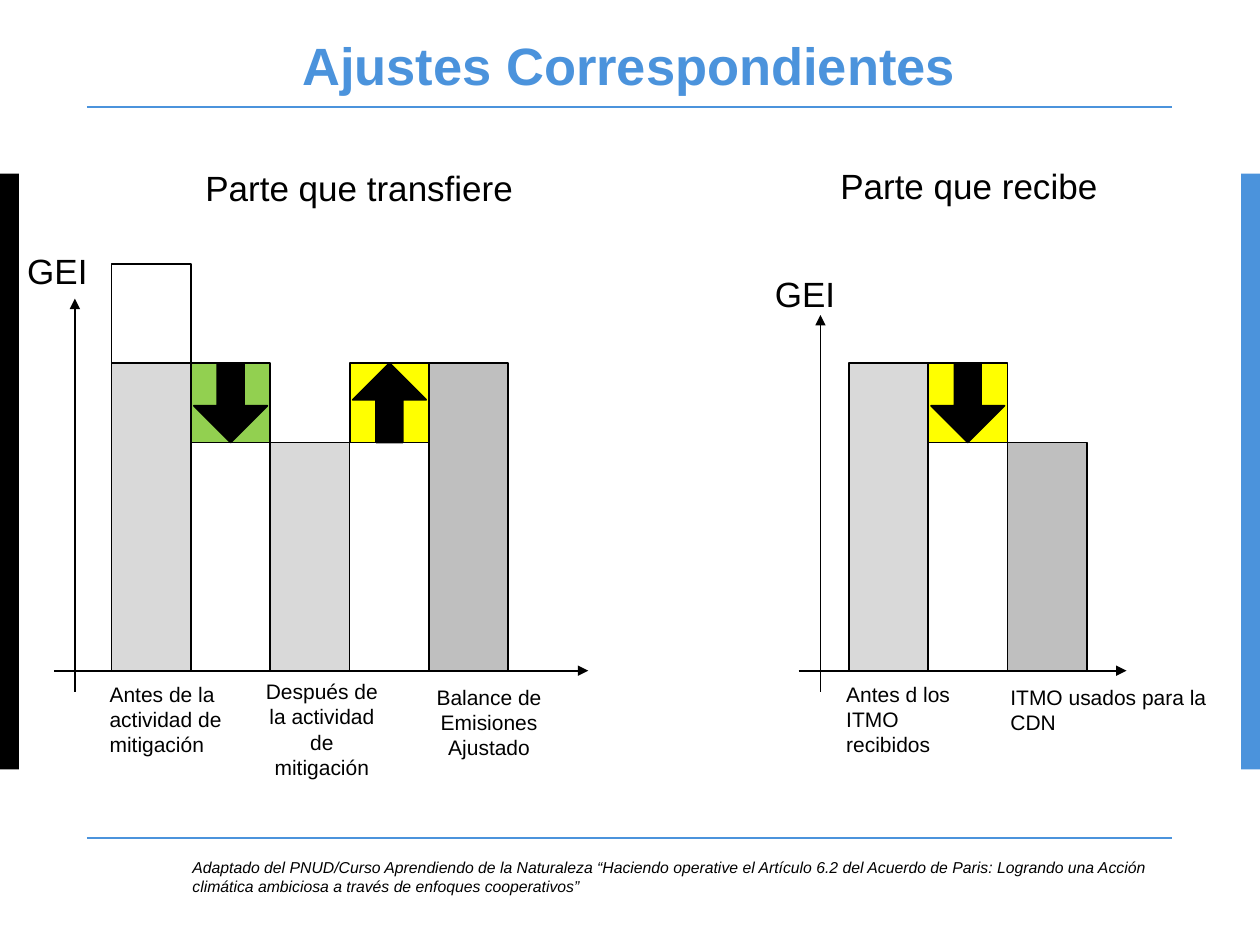
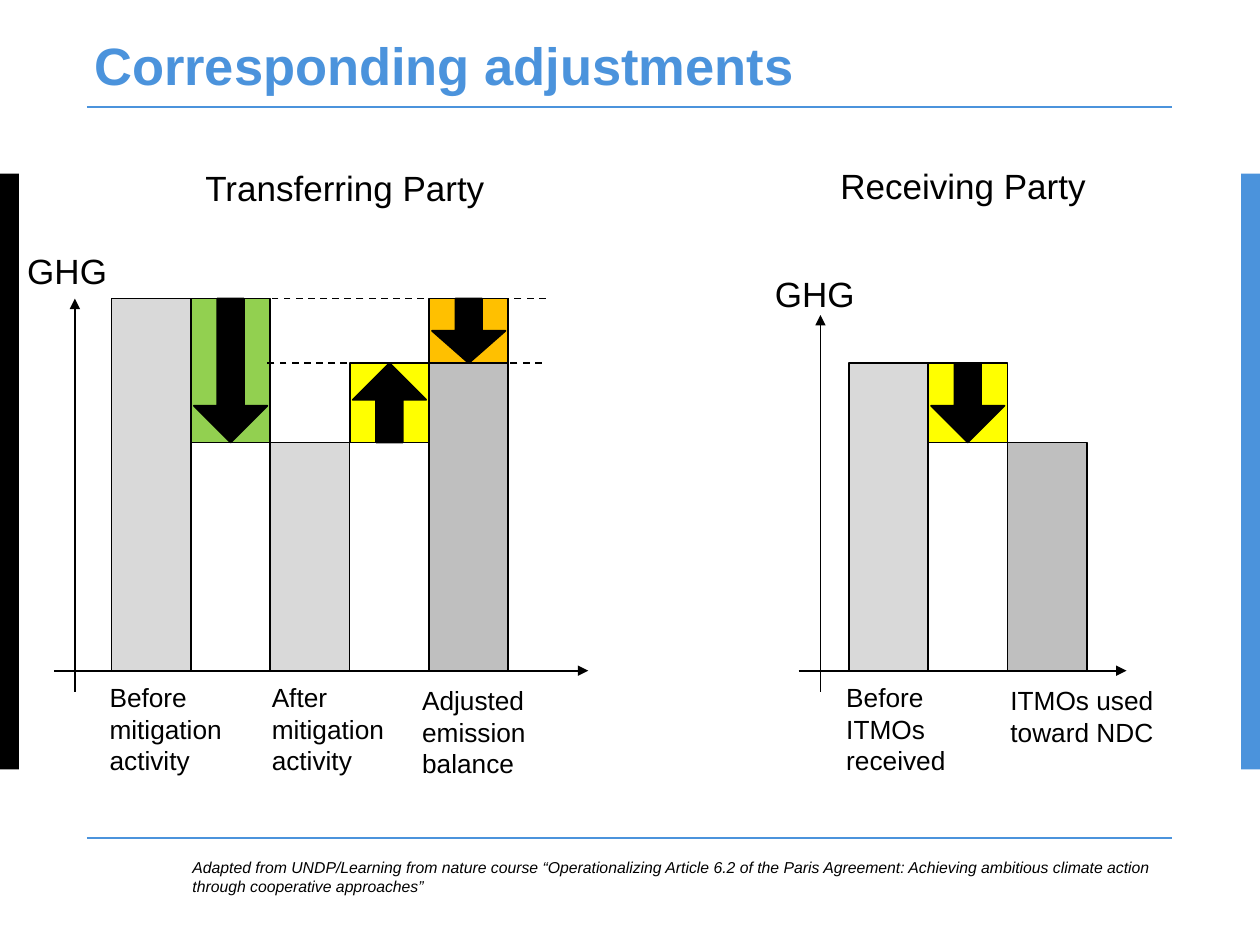
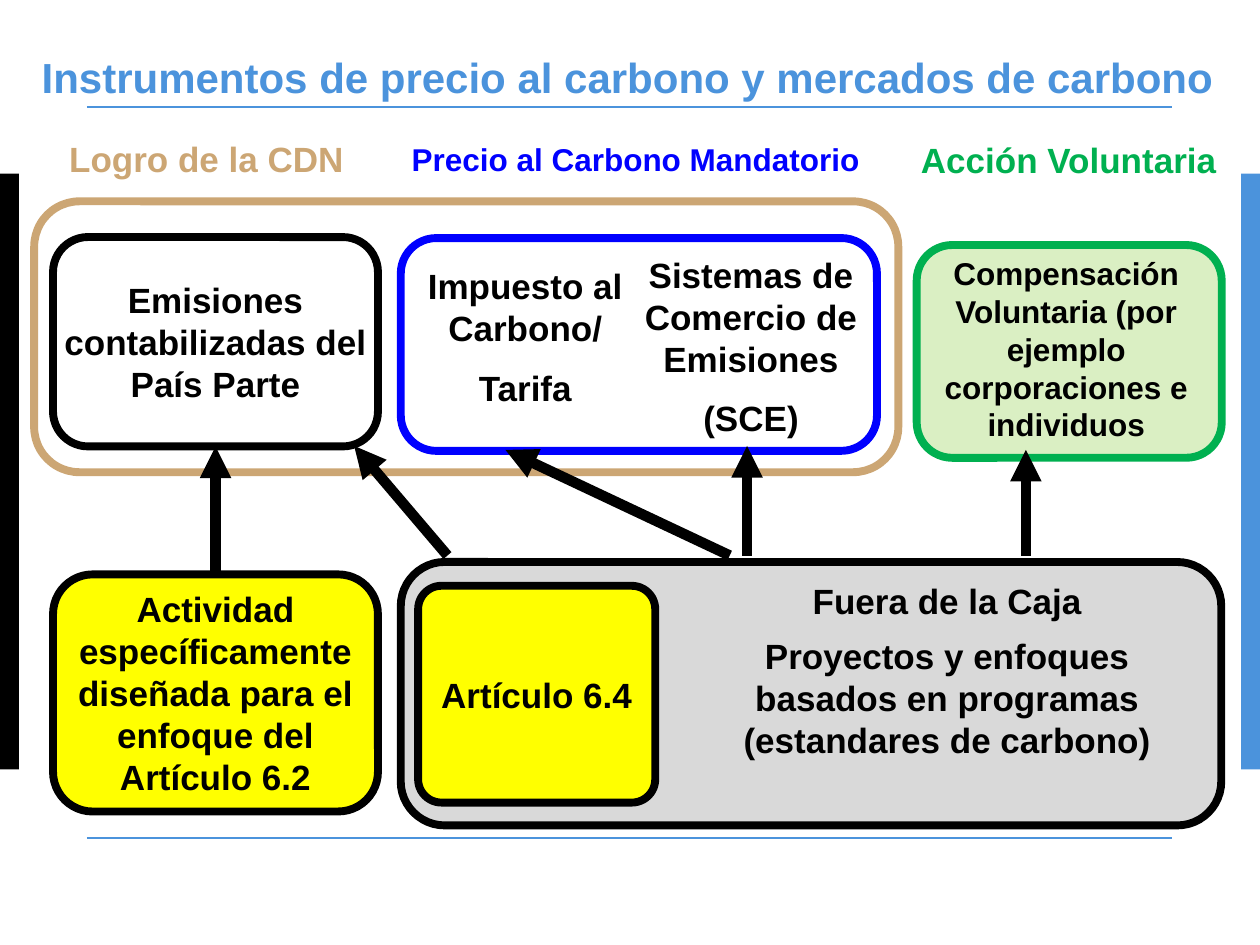
from dataclasses import dataclass

from lxml.etree import SubElement
from pptx import Presentation
from pptx.dml.color import RGBColor
from pptx.enum.dml import MSO_LINE_DASH_STYLE as Dash
from pptx.enum.shapes import MSO_CONNECTOR as Connector
from pptx.enum.shapes import MSO_SHAPE as Shape
from pptx.enum.text import MSO_ANCHOR as Anchor
from pptx.enum.text import MSO_AUTO_SIZE as AutoSize
from pptx.enum.text import PP_ALIGN as Align
from pptx.oxml.ns import qn
from pptx.util import Cm, Pt


@dataclass(frozen=True)
class Theme:
    font: str = "Arial"
    black: str = "000000"
    accent: str = "4B93DC"
    light_bar: str = "D9D9D9"
    dark_bar: str = "BFBFBF"
    mitigation: str = "92D050"
    transfer: str = "FFFF00"
    excess: str = "FFC000"
    ndc: str = "CCA674"
    mandatory: str = "0000FF"
    voluntary: str = "00B050"
    voluntary_fill: str = "DAEFC3"
    title_size: int = 30
    long_title_size: int = 24
    body_size: int = 20
    small_body_size: int = 18
    note_size: int = 9
    thin: float = 1
    frame: float = 4.5
    thick: float = 6


THEME = Theme()

# Emission diagrams, in centimetres; levels are heights above the time axis
BASELINE = 13.52
COLUMN = 1.6
ARROW = 1.48
TRANSFERRING, RECEIVING = 2.25, 17.11
REDUCED, BALANCED, INITIAL = 4.6, 6.2, 7.5
BASELINE_SCENARIO = 8.2


def set_format(target, **values):
    for attribute, value in values.items():
        setattr(target, attribute, value)


def cm_box(box):
    return [Cm(length) for length in box]


def write_text(frame, paragraphs, size, color=THEME.black, align=Align.LEFT,
               gap=10, line_spacing=None, **font):
    """Fill a text frame; gap is the space between paragraphs in points."""
    for index, words in enumerate(paragraphs):
        paragraph = frame.paragraphs[0] if index == 0 else frame.add_paragraph()
        paragraph.text = words
        set_format(paragraph, alignment=align, line_spacing=line_spacing,
                   space_before=Pt(gap if index else 0))
        set_format(paragraph.font, name=THEME.font, size=Pt(size), **font)
        paragraph.font.color.rgb = RGBColor.from_string(color)


def add_text(slide, box, *paragraphs, size=THEME.body_size, **style):
    frame = slide.shapes.add_textbox(*cm_box(box)).text_frame
    set_format(frame, word_wrap=True, auto_size=AutoSize.SHAPE_TO_FIT_TEXT)
    write_text(frame, paragraphs, size, **style)


def add_box(slide, kind, box, fill=None, line=None, width=THEME.thin, corner=None):
    shape = slide.shapes.add_shape(kind, *cm_box(box))
    shape.shadow.inherit = False
    if fill:
        shape.fill.solid()
        shape.fill.fore_color.rgb = RGBColor.from_string(fill)
    else:
        shape.fill.background()
    if line:
        shape.line.color.rgb = RGBColor.from_string(line)
        shape.line.width = Pt(width)
    else:
        shape.line.fill.background()
    if corner:
        shape.adjustments[0] = corner
    return shape


def add_card(slide, box, *paragraphs, fill=None, line=THEME.black, corner=0.167):
    """Add a thick rounded frame with centred bold text."""
    card = add_box(slide, Shape.ROUNDED_RECTANGLE, box, fill, line, THEME.frame, corner)
    set_format(card.text_frame, word_wrap=True, vertical_anchor=Anchor.MIDDLE,
               margin_left=0, margin_top=0, margin_right=0, margin_bottom=0)
    write_text(card.text_frame, paragraphs, THEME.body_size, align=Align.CENTER, bold=True)
    return card


def add_line(slide, start, end, color=THEME.black, width=THEME.thin, dash=None, arrow=False):
    line = slide.shapes.add_connector(Connector.STRAIGHT, *cm_box(start + end))
    line.line.color.rgb = RGBColor.from_string(color)
    set_format(line.line, width=Pt(width), dash_style=dash)
    properties = line.element.spPr
    if arrow:
        SubElement(properties.find(qn("a:ln")), qn("a:tailEnd"), type="triangle")
    SubElement(properties, qn("a:effectLst"))
    return line


def add_title(slide, words, box=(1.9, 0.53, 21.56, 1.3), size=THEME.title_size,
              align=Align.LEFT):
    title = slide.shapes.title
    left, top, width, height = cm_box(box)
    set_format(title, left=left, top=top, width=width, height=height)
    set_format(title.text_frame, word_wrap=True, vertical_anchor=Anchor.TOP,
               auto_size=AutoSize.SHAPE_TO_FIT_TEXT,
               margin_left=0, margin_top=0, margin_right=0, margin_bottom=0)
    write_text(title.text_frame, [words], size, THEME.accent, align,
               line_spacing=1.1, bold=True)


def decorate_layout(layout, slide):
    """Draw the side bands and rules, then move them into the layout."""
    bands = [add_box(slide, Shape.RECTANGLE, (left, 3.5, 0.38, 12.01), color)
             for left, color in ((0, THEME.black), (25.02, THEME.accent))]
    rules = [add_line(slide, (1.75, y), (23.62, y), THEME.accent) for y in (2.16, 16.89)]
    for part in bands + rules:
        layout.shapes.element.append(part.element)


def add_bar(slide, party, column, top, bottom=0, fill=None):
    """Add a bar between two emission levels in a column of a party's diagram."""
    box = (party + column * COLUMN, BASELINE - top, COLUMN, top - bottom)
    add_box(slide, Shape.RECTANGLE, box, fill, THEME.black)


def add_change(slide, party, column, top, bottom, fill, rising=False):
    """Add a coloured bar with an arrow showing the change in emissions."""
    add_bar(slide, party, column, top, bottom, fill)
    left = party + column * COLUMN + (COLUMN - ARROW) / 2
    arrow = add_box(slide, Shape.DOWN_ARROW, (left, BASELINE - top, ARROW, top - bottom),
                    THEME.black, THEME.black)
    arrow.adjustments[0] = 0.363
    arrow.rotation = 180 if rising else 0


def add_axes(slide, time_start, time_end, gas_x, gas_top):
    add_line(slide, (time_start, BASELINE), (time_end, BASELINE), arrow=True)
    add_line(slide, (gas_x, 13.94), (gas_x, gas_top), arrow=True)


def add_adjustment_diagrams(slide, before, headings, gas, note):
    """Draw both parties' diagrams; before is the first bar's emission level."""
    add_bar(slide, TRANSFERRING, 0, before, fill=THEME.light_bar)
    add_bar(slide, TRANSFERRING, 2, REDUCED, fill=THEME.light_bar)
    add_bar(slide, TRANSFERRING, 4, BALANCED, fill=THEME.dark_bar)
    add_bar(slide, RECEIVING, 0, BALANCED, fill=THEME.light_bar)
    add_bar(slide, RECEIVING, 2, REDUCED, fill=THEME.dark_bar)
    add_change(slide, TRANSFERRING, 1, before, REDUCED, THEME.mitigation)
    add_change(slide, TRANSFERRING, 3, BALANCED, REDUCED, THEME.transfer, rising=True)
    add_change(slide, RECEIVING, 1, BALANCED, REDUCED, THEME.transfer)
    add_axes(slide, 1.09, 11.86, 1.51, 6.02)
    add_axes(slide, 16.1, 22.71, 16.54, 6.35)
    for heading, box in zip(headings, ((3.89, 3.23, 7.42, 1.12), (16.69, 3.2, 6.63, 1.12))):
        add_text(slide, box, heading)
    for left, top in ((0.3, 4.9), (15.37, 5.36)):
        add_text(slide, (left, top, 2.31, 1.12), gas)
    add_text(slide, (3.63, 17.17, 19.86, 1.68), note, size=THEME.note_size, italic=True)


def add_bar_labels(slide, size, labels):
    for words, left, top, width, align in labels:
        add_text(slide, (left, top, width, 1.8), words, size=size, align=align)


def build_spanish_adjustments(slide):
    add_title(slide, "Ajustes Correspondientes", align=Align.CENTER)
    add_adjustment_diagrams(
        slide, BALANCED, ("Parte que transfiere", "Parte que recibe"), "GEI",
        "Adaptado del PNUD/Curso Aprendiendo de la Naturaleza “Haciendo operative el "
        "Artículo 6.2 del Acuerdo de Paris: Logrando una Acción climática ambiciosa a "
        "través de enfoques cooperativos”")
    add_bar(slide, TRANSFERRING, 0, BASELINE_SCENARIO, BALANCED)
    add_bar_labels(slide, 12, (
        ("Antes de la actividad de mitigación", 1.96, 13.61, 2.92, Align.LEFT),
        ("Después de la actividad de mitigación", 5.03, 13.56, 2.92, Align.CENTER),
        ("Balance de Emisiones Ajustado", 8.26, 13.67, 3.2, Align.CENTER),
        ("Antes d los ITMO recibidos", 16.81, 13.61, 2.92, Align.LEFT),
        ("ITMO usados para la CDN", 20.12, 13.67, 4.52, Align.LEFT)))


def build_english_adjustments(slide):
    add_title(slide, "Corresponding adjustments")
    add_adjustment_diagrams(
        slide, INITIAL, ("Transferring Party", "Receiving Party"), "GHG",
        "Adapted from UNDP/Learning from nature course “Operationalizing Article 6.2 of "
        "the Paris Agreement: Achieving ambitious climate action through cooperative "
        "approaches”")
    add_bar_labels(slide, 15, (
        ("Before mitigation activity", 1.96, 13.61, 2.92, Align.LEFT),
        ("After mitigation activity", 5.23, 13.61, 2.92, Align.LEFT),
        ("Adjusted emission balance", 8.26, 13.67, 4.52, Align.LEFT),
        ("Before ITMOs received", 16.81, 13.61, 2.54, Align.LEFT),
        ("ITMOs used toward NDC", 20.12, 13.67, 4.52, Align.LEFT)))
    for level, right, left in ((BALANCED, 10.92, 5.38), (INITIAL, 11, 5.49)):
        y = BASELINE - level
        add_line(slide, (right, y), (left, y), dash=Dash.DASH)
    add_change(slide, TRANSFERRING, 4, INITIAL, BALANCED, THEME.excess)


def build_carbon_instruments(slide):
    add_title(slide, "Instrumentos de precio al carbono y mercados de carbono",
              (0.84, 0.94, 24.33, 1.04), THEME.long_title_size)
    add_card(slide, (0.69, 4.06, 17.42, 5.46), line=THEME.ndc)
    add_card(slide, (8.08, 4.8, 9.6, 4.29), line=THEME.mandatory)
    add_card(slide, (18.48, 4.94, 6.15, 4.29), fill=THEME.voluntary_fill,
             line=THEME.voluntary)
    add_card(slide, (8.08, 11.33, 16.54, 5.31), fill=THEME.light_bar)

    centred = dict(align=Align.CENTER, bold=True)
    for words, box, color, size in (
            ("Logro de la CDN", (0.84, 2.64, 6.65, 1.12), THEME.ndc, THEME.body_size),
            ("Precio al Carbono Mandatorio", (7.72, 2.69, 10.19, 1.02),
             THEME.mandatory, THEME.small_body_size),
            ("Acción Voluntaria", (18.19, 2.67, 6.71, 1.12),
             THEME.voluntary, THEME.body_size)):
        add_text(slide, box, words, color=color, size=size, **centred)
    add_text(slide, (8.28, 5.21, 4.62, 3.25), "Impuesto al Carbono/", "Tarifa", **centred)
    add_text(slide, (12.37, 4.98, 5.54, 4.11), "Sistemas de Comercio de Emisiones",
             "(SCE)", **centred)
    add_text(slide, (18.47, 5, 6.05, 4.11),
             "Compensación Voluntaria (por ejemplo corporaciones e individuos",
             size=THEME.small_body_size, **centred)
    add_text(slide, (14.22, 11.56, 9.75, 1.12), "Fuera de la Caja", **centred)
    add_text(slide, (14.22, 12.67, 9.75, 2.82),
             "Proyectos y enfoques basados en programas (estandares de carbono)", **centred)

    article_62 = add_card(slide, (1.07, 11.58, 6.55, 4.78),
                          "Actividad específicamente diseñada para el enfoque del Artículo 6.2",
                          fill=THEME.transfer)
    add_card(slide, (8.43, 11.81, 4.78, 4.37), "Artículo 6.4", fill=THEME.transfer,
             corner=0.108)
    emissions = add_card(slide, (1.07, 4.78, 6.55, 4.22),
                         "Emisiones contabilizadas del País Parte")

    flow = dict(width=THEME.thick, arrow=True)
    for start_x, end in ((15.06, (15.06, 8.99)), (20.68, (20.68, 9.07)),
                         (14.71, (10.19, 9.07)), (9.02, (7.14, 8.99))):
        add_line(slide, (start_x, 11.2), end, **flow)
    contribution = add_line(slide, (4.34, 11.58), (4.34, 9), **flow)
    contribution.begin_connect(article_62, 0)
    contribution.end_connect(emissions, 2)


def main():
    deck = Presentation()
    set_format(deck, slide_width=Cm(25.4), slide_height=Cm(19.05))
    title_only = deck.slide_layouts[5]
    builders = (build_spanish_adjustments, build_english_adjustments,
                build_carbon_instruments)
    slides = [deck.slides.add_slide(title_only) for _ in builders]
    decorate_layout(title_only, slides[0])
    for build, slide in zip(builders, slides):
        build(slide)
    deck.save("out.pptx")


if __name__ == "__main__":
    main()
